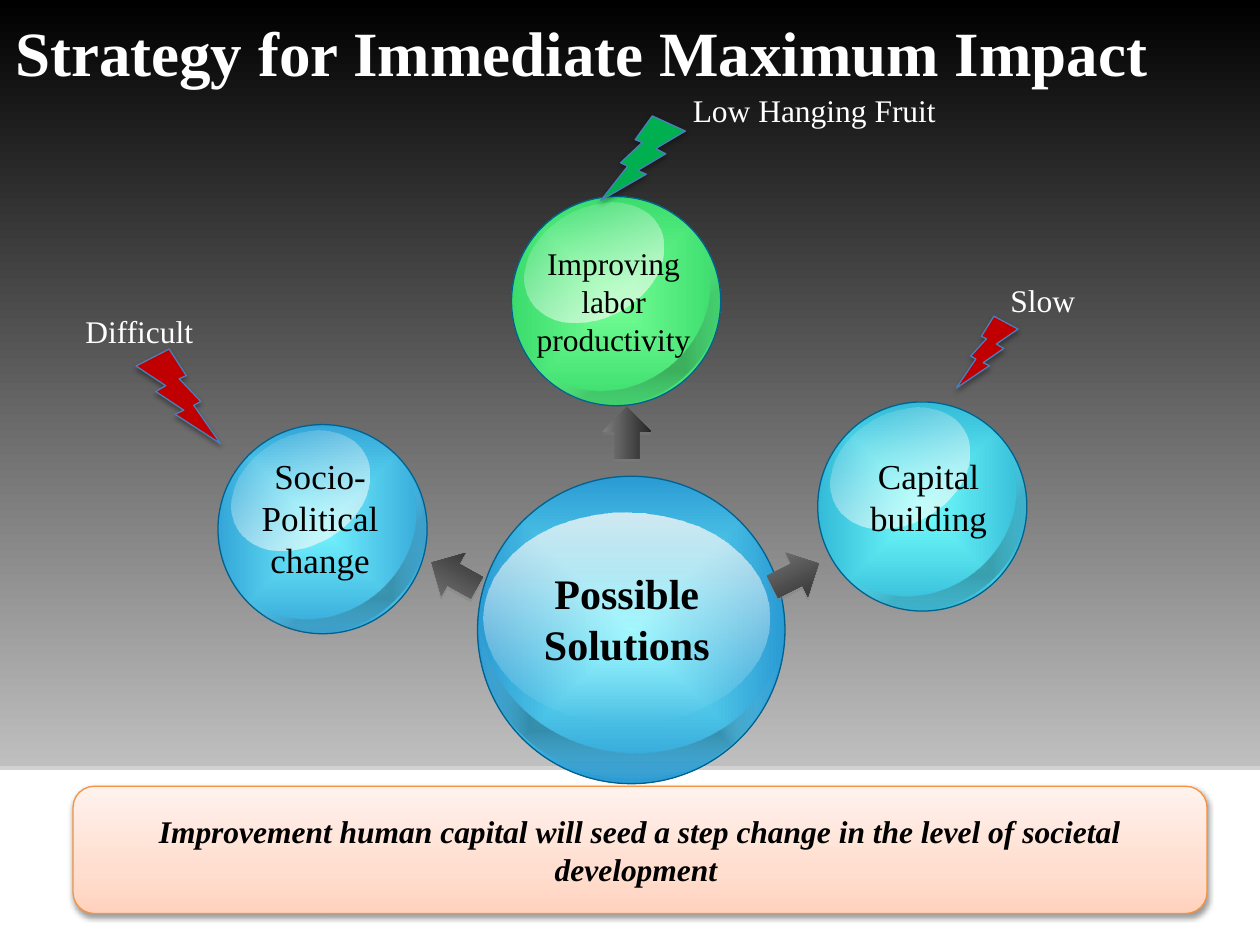
from dataclasses import dataclass
from typing import Optional

from lxml.etree import SubElement
from pptx import Presentation
from pptx.dml.color import RGBColor
from pptx.enum.shapes import MSO_SHAPE
from pptx.enum.text import MSO_ANCHOR, MSO_AUTO_SIZE, PP_ALIGN
from pptx.oxml.ns import qn
from pptx.util import Inches, Pt

COLUMNS, ROWS = 100, 75
CELL = Inches(0.1)
FONT = "Times New Roman"

BLACK = RGBColor(0x00, 0x00, 0x00)
WHITE = RGBColor(0xFF, 0xFF, 0xFF)
SILVER = RGBColor(0xBF, 0xBF, 0xBF)
GREY = RGBColor(0x80, 0x80, 0x80)
ARROW_LIGHT = RGBColor(0x7F, 0x7F, 0x7F)
ARROW_DARK = RGBColor(0x26, 0x26, 0x26)
OUTLINE = RGBColor(0x00, 0x61, 0x8E)
SKY, BLUE = RGBColor(0x74, 0xF4, 0xFF), RGBColor(0x20, 0x8E, 0xCD)
MINT, GREEN = RGBColor(0x74, 0xFF, 0x95), RGBColor(0x29, 0xD1, 0x60)
AQUA, TEAL = RGBColor(0x74, 0xFF, 0xFD), RGBColor(0x20, 0xA6, 0xCD)
GLOSS = RGBColor(0xFF, 0xFC, 0xF9)
BOLT_RED = RGBColor(0xC0, 0x00, 0x00)
BOLT_GREEN = RGBColor(0x00, 0xB0, 0x50)
BOLT_LINE = RGBColor(0x4B, 0x7E, 0xBC)
PEACH = RGBColor(0xFF, 0xD2, 0xBD)
PEACH_MID = RGBColor(0xFF, 0xDE, 0xD0)
PEACH_PALE = RGBColor(0xFF, 0xF2, 0xED)
ORANGE = RGBColor(0xF6, 0x92, 0x40)


@dataclass(frozen=True)
class Stop:
    position: int
    color: RGBColor
    opacity: int = 100


@dataclass(frozen=True)
class Gradient:
    stops: tuple[Stop, ...]
    angle: Optional[int] = None


@dataclass(frozen=True)
class Shadow:
    color: RGBColor
    opacity: int
    blur: float
    distance: float = 1.8


@dataclass(frozen=True)
class Area:
    column: float
    row: float
    width: float
    height: float

    def lengths(self) -> list[int]:
        return [round(value * CELL) for value in (self.column, self.row, self.width, self.height)]


@dataclass(frozen=True)
class Sphere:
    column: float
    row: float
    center: RGBColor
    rim: RGBColor
    text: str
    text_area: Area
    size: int = 20


@dataclass(frozen=True)
class Arrow:
    column: float
    row: float
    rotation: float


@dataclass(frozen=True)
class Bolt:
    area: Area
    color: RGBColor
    flip: bool
    label: str
    label_area: Area


GLOSS_STOPS = (Stop(0, GLOSS, 77), Stop(100, WHITE, 0))
SHADE = Gradient((Stop(24, BLACK, 24), Stop(100, WHITE, 0)))
FLAT_SHADOW = Shadow(GREY, 35, 0)
SOFT_SHADOW = Shadow(BLACK, 35, 3.1)

SPHERES = [
    Sphere(40.6, 15.6, MINT, GREEN, "Improving labor productivity", Area(40.8, 18.9, 15.8, 10.4), 18),
    Sphere(64.9, 31.9, AQUA, TEAL, "Capital building", Area(65.8, 35.6, 15.8, 7.7)),
    Sphere(17.3, 33.7, SKY, BLUE, "Socio- Political change", Area(17.5, 35.6, 15.8, 11.1)),
]
ARROWS = [Arrow(47.7, 32.4, 270), Arrow(61.1, 43.7, 333.1), Arrow(34, 43.7, 209.2)]
BOLTS = [
    Bolt(Area(10.8, 27.7, 6.7, 7.5), BOLT_RED, False, "Difficult", Area(5.8, 24.3, 15, 4)),
    Bolt(Area(47.7, 9.2, 6.7, 6.7), BOLT_GREEN, True, "Low Hanging Fruit", Area(54, 6.7, 24.4, 4)),
    Bolt(Area(75.9, 25.1, 4.9, 5.7), BOLT_RED, True, "Slow", Area(79.2, 21.8, 15, 4)),
]


def add_color(parent, color: RGBColor, opacity: int) -> None:
    node = SubElement(parent, qn("a:srgbClr"), val=str(color))
    if opacity < 100:
        SubElement(node, qn("a:alpha"), val=str(opacity * 1000))


def apply_gradient(shape, gradient: Gradient) -> None:
    shape.fill.background()
    properties = shape.element.spPr
    empty = properties.find(qn("a:noFill"))
    fill = SubElement(properties, qn("a:gradFill"), rotWithShape="1")
    properties.replace(empty, fill)
    stops = SubElement(fill, qn("a:gsLst"))
    for stop in gradient.stops:
        node = SubElement(stops, qn("a:gs"), pos=str(stop.position * 1000))
        add_color(node, stop.color, stop.opacity)
    if gradient.angle is None:
        route = SubElement(fill, qn("a:path"), path="shape")
        SubElement(route, qn("a:fillToRect"), {side: "50000" for side in "ltrb"})
    else:
        SubElement(fill, qn("a:lin"), ang=str(gradient.angle * 60000), scaled="0")


def apply_shadow(shape, shadow: Shadow) -> None:
    effects = shape.element.spPr.find(qn("a:effectLst"))
    node = SubElement(effects, qn("a:outerShdw"), blurRad=str(Pt(shadow.blur)),
                      dist=str(Pt(shadow.distance)), dir="5400000", rotWithShape="0")
    add_color(node, shadow.color, shadow.opacity)


def draw_shape(page, kind, area: Area, fill, line: Optional[RGBColor] = None,
               rotation: float = 0, flip: bool = False, shadow: Optional[Shadow] = None):
    shape = page.shapes.add_shape(kind, *area.lengths())
    shape.rotation = rotation
    shape.shadow.inherit = False
    if flip:
        shape.element.spPr.find(qn("a:xfrm")).set("flipH", "1")
    if isinstance(fill, Gradient):
        apply_gradient(shape, fill)
    else:
        shape.fill.solid()
        shape.fill.fore_color.rgb = fill
    if line is None:
        shape.line.fill.background()
    else:
        shape.line.color.rgb = line
        shape.line.width = Pt(0.75)
    if shadow:
        apply_shadow(shape, shadow)
    return shape


def write_text(box, text: str, *, size: int = 18, color: RGBColor = BLACK, bold: bool = False,
               italic: bool = False, align=PP_ALIGN.CENTER, anchor=MSO_ANCHOR.MIDDLE) -> None:
    frame = box.text_frame
    frame.word_wrap = True
    frame.auto_size = MSO_AUTO_SIZE.NONE
    frame.vertical_anchor = anchor
    para = frame.paragraphs[0]
    para.alignment = align
    span = para.add_run()
    span.text = text
    span.font.name, span.font.size = FONT, Pt(size)
    span.font.bold, span.font.italic = bold, italic
    span.font.color.rgb = color


def draw_text(page, area: Area, text: str, **style) -> None:
    write_text(page.shapes.add_textbox(*area.lengths()), text, anchor=MSO_ANCHOR.TOP, **style)


def draw_hub(page) -> None:
    draw_shape(page, MSO_SHAPE.OVAL, Area(37.9, 37.8, 24.4, 24.4),
               Gradient((Stop(0, SKY), Stop(100, BLUE))), OUTLINE, 350.9)
    gloss = draw_shape(page, MSO_SHAPE.OVAL, Area(38.4, 40.7, 22.7, 16.7), Gradient(GLOSS_STOPS, 90))
    write_text(gloss, "Possible Solutions", size=24, bold=True)
    moon = draw_shape(page, MSO_SHAPE.MOON, Area(44.1, 44.5, 10.7, 23.7), SHADE, rotation=275.9)
    moon.adjustments[0] = 0.19


def draw_sphere(page, sphere: Sphere) -> None:
    column, row = sphere.column, sphere.row
    draw_shape(page, MSO_SHAPE.OVAL, Area(column, row, 16.6, 16.6),
               Gradient((Stop(0, sphere.center), Stop(100, sphere.rim))), OUTLINE, 338.6, True)
    moon = draw_shape(page, MSO_SHAPE.MOON, Area(column + 7.2, row + 3.8, 7.3, 16.1), SHADE,
                      rotation=53.6, flip=True)
    moon.adjustments[0] = 0.19
    draw_shape(page, MSO_SHAPE.OVAL, Area(column + 0.7, row + 0.9, 11.7, 8.7),
               Gradient(GLOSS_STOPS, 270), rotation=329.4, flip=True)
    draw_text(page, sphere.text_area, sphere.text, size=sphere.size)


def draw_bolt(page, bolt: Bolt) -> None:
    draw_shape(page, MSO_SHAPE.LIGHTNING_BOLT, bolt.area, bolt.color, BOLT_LINE,
               flip=bolt.flip, shadow=SOFT_SHADOW)
    draw_text(page, bolt.label_area, bolt.label, color=WHITE, align=PP_ALIGN.LEFT)


def main() -> None:
    deck = Presentation()
    deck.slide_width, deck.slide_height = COLUMNS * CELL, ROWS * CELL
    page = deck.slides.add_slide(deck.slide_layouts[5])
    draw_shape(page, MSO_SHAPE.RECTANGLE, Area(0, 0, COLUMNS, 60.8),
               Gradient((Stop(0, BLACK), Stop(100, SILVER)), 90), shadow=FLAT_SHADOW)
    draw_hub(page)
    for sphere in SPHERES:
        draw_sphere(page, sphere)
    for arrow in ARROWS:
        draw_shape(page, MSO_SHAPE.RIGHT_ARROW, Area(arrow.column, arrow.row, 4.1, 3.9),
                   Gradient((Stop(0, ARROW_LIGHT), Stop(100, ARROW_DARK)), 90),
                   rotation=arrow.rotation, shadow=FLAT_SHADOW)
    for bolt in BOLTS:
        draw_bolt(page, bolt)
    title = page.shapes.title
    title.left, title.top, title.width, title.height = Area(0.2, 0.6, 99.8, 7.1).lengths()
    write_text(title, "Strategy for Immediate Maximum Impact", size=36, color=WHITE, bold=True,
               align=PP_ALIGN.LEFT, anchor=MSO_ANCHOR.TOP)
    title.element.getparent().append(title.element)
    banner = draw_shape(page, MSO_SHAPE.ROUNDED_RECTANGLE, Area(5.8, 62.4, 90, 10.1),
                        Gradient((Stop(0, PEACH), Stop(35, PEACH_MID), Stop(100, PEACH_PALE)), 270),
                        ORANGE, shadow=Shadow(BLACK, 38, 3.1, 1.6))
    write_text(banner, "Improvement human capital will seed a step change in the level of "
               "societal development ", bold=True, italic=True)
    deck.save("out.pptx")


if __name__ == "__main__":
    main()
